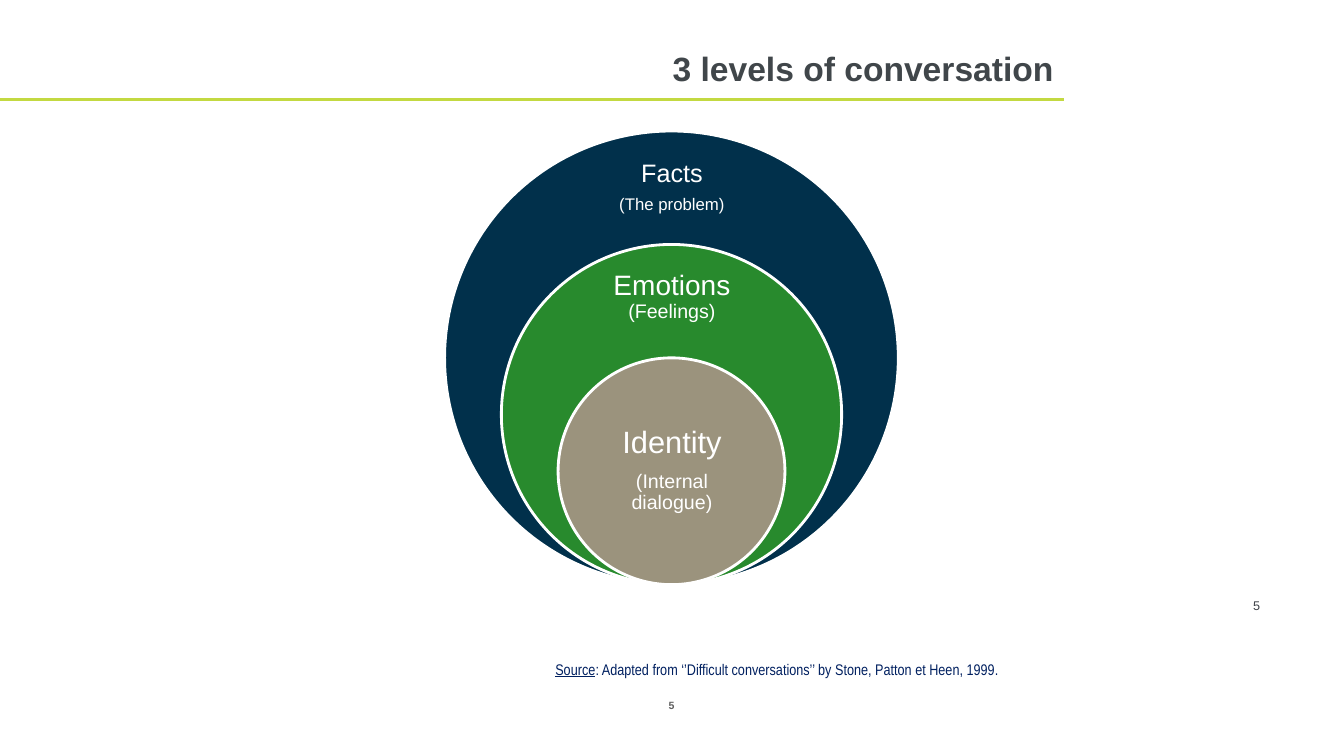
"""Build the slide on the three nested levels of conversation."""
from pptx import Presentation
from pptx.dml.color import RGBColor
from pptx.enum.shapes import MSO_CONNECTOR, MSO_SHAPE
from pptx.enum.text import MSO_ANCHOR as Anchor, PP_ALIGN as Align
from pptx.oxml.ns import qn
from pptx.util import Inches, Pt
from lxml.etree import SubElement

WHITE = RGBColor(0xFF, 0xFF, 0xFF)
NAVY = RGBColor(0x01, 0x30, 0x4B)
GREEN = RGBColor(0x28, 0x8A, 0x2D)
TAUPE = RGBColor(0x9B, 0x93, 0x7D)
LIME = RGBColor(0xC3, 0xD9, 0x41)
TITLE_GREY = RGBColor(0x40, 0x46, 0x4A)
NUMBER_GREY = RGBColor(0x3E, 0x42, 0x48)
FOOTER_GREY = RGBColor(0x60, 0x60, 0x60)
SOURCE_BLUE = RGBColor(0x00, 0x20, 0x60)

CENTER_X, BOTTOM, OUTER_DIAMETER = 6.66, 5.8, 4.5

LEVELS = [
    (NAVY, (5.88, 1.52, 1.57, 0.68), 0.14, [[("Facts", 18)], [("(The problem)", 12)]]),
    (GREEN, (5.88, 2.63, 1.57, 0.63), 0.16, [[("Emotions ", 20), ("(Feelings)", 14)]]),
    (TAUPE, (5.87, 4.11, 1.59, 1.12), 0.17, [[("Identity", 22)], [("(Internal dialogue)", 14)]]),
]


def style(font, size, color, name="Arial", bold=False):
    """Set the face, size, weight and colour of a font."""
    font.name, font.size, font.bold = name, Pt(size), bold
    font.color.rgb = color


def add_title(slide, text):
    """Place and format the title placeholder."""
    title = slide.shapes.title
    title.left, title.top = Inches(0), Inches(0.13)
    title.width, title.height = Inches(10.55), Inches(1.09)
    frame = title.text_frame
    frame.text = text
    frame.vertical_anchor = Anchor.MIDDLE
    heading = frame.paragraphs[0]
    heading.alignment = Align.RIGHT
    style(heading.font, 24, TITLE_GREY, bold=True)


def add_rule(slide):
    """Draw the lime line under the title."""
    rule = slide.shapes.add_connector(
        MSO_CONNECTOR.STRAIGHT, Inches(10.55), Inches(0.99), Inches(0), Inches(0.99))
    rule.line.color.rgb = LIME
    rule.line.width = Pt(2)
    SubElement(rule.element.spPr, qn("a:effectLst"))


def add_frame(slide, box, anchor=Anchor.TOP, wrap=True):
    """Add a text box and return its text frame."""
    frame = slide.shapes.add_textbox(*map(Inches, box)).text_frame
    frame.word_wrap = wrap
    frame.vertical_anchor = anchor
    return frame


def add_circle(slide, diameter, color):
    """Draw a circle that rests on the common bottom point."""
    circle = slide.shapes.add_shape(
        MSO_SHAPE.OVAL, Inches(CENTER_X - diameter / 2), Inches(BOTTOM - diameter),
        Inches(diameter), Inches(diameter))
    circle.shadow.inherit = False
    circle.fill.solid()
    circle.fill.fore_color.rgb = color
    circle.line.color.rgb = WHITE
    circle.line.width = Pt(2)


def add_label(slide, box, inset, lines):
    """Write the name and explanation of a level."""
    frame = add_frame(slide, box, Anchor.MIDDLE)
    frame.margin_left = frame.margin_right = Inches(inset)
    frame.margin_top = frame.margin_bottom = Inches(inset)
    for index, runs in enumerate(lines):
        line = frame.add_paragraph() if index else frame.paragraphs[0]
        line.alignment = Align.CENTER
        line.line_spacing = 0.9
        line.space_after = Pt(round(runs[0][1] * 0.35))
        for text, size in runs:
            run = line.add_run()
            run.text = text
            style(run.font, size, WHITE)


def add_number(slide, box, size, color, anchor, align, bold=False):
    """Write the slide number."""
    number = add_frame(slide, box, anchor).paragraphs[0]
    number.text = "5"
    number.alignment = align
    style(number.font, size, color, bold=bold)


def add_source(slide):
    """Write the source line with its underlined lead word."""
    source = add_frame(slide, (5.41, 6.5, 4.63, 0.29), wrap=False).paragraphs[0]
    source.alignment = Align.LEFT
    style(source.font, 11, SOURCE_BLUE, "Arial Narrow")
    lead = source.add_run()
    lead.text = "Source"
    citation = source.add_run()
    citation.text = ": Adapted from ‘’Difficult conversations’’ by Stone, Patton et Heen, 1999."
    for run in (lead, citation):
        style(run.font, 11, SOURCE_BLUE, "Arial Narrow")
    lead.font.underline = True


def main():
    """Assemble and save the slide."""
    deck = Presentation()
    deck.slide_width, deck.slide_height = Inches(13.33), Inches(7.5)
    slide = deck.slides.add_slide(deck.slide_layouts[5])
    add_number(slide, (6.4, 6.88, 0.52, 0.24), 7.5, FOOTER_GREY,
               Anchor.MIDDLE, Align.CENTER, bold=True)
    add_rule(slide)
    add_number(slide, (12.33, 5.88, 0.87, 0.25), 9, NUMBER_GREY, Anchor.TOP, Align.LEFT)
    add_title(slide, "3 levels of conversation")
    for level, (color, box, inset, lines) in enumerate(LEVELS):
        add_circle(slide, OUTER_DIAMETER * (1 - level / 4), color)
        add_label(slide, box, inset, lines)
    add_source(slide)
    deck.save("out.pptx")


if __name__ == "__main__":
    main()
